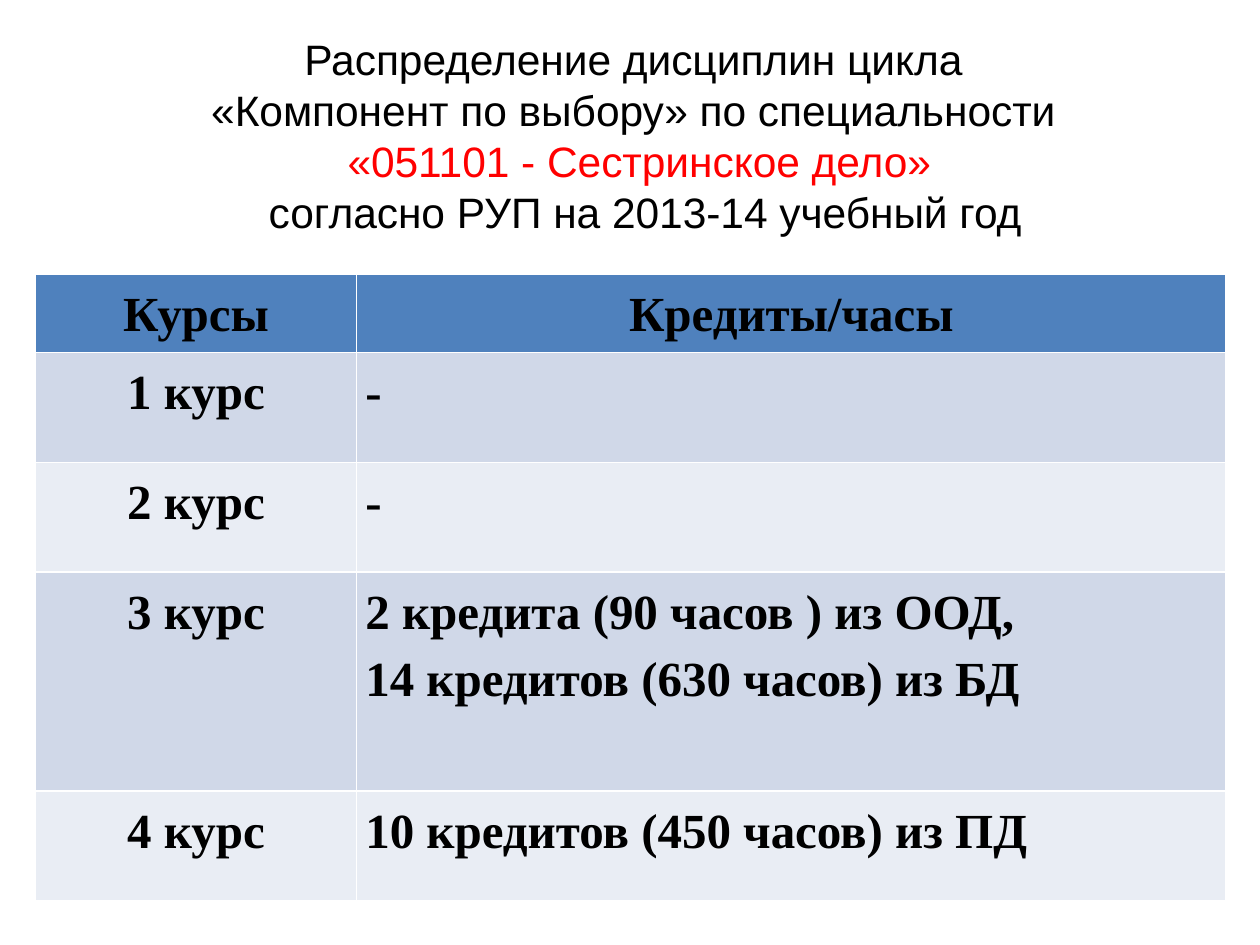
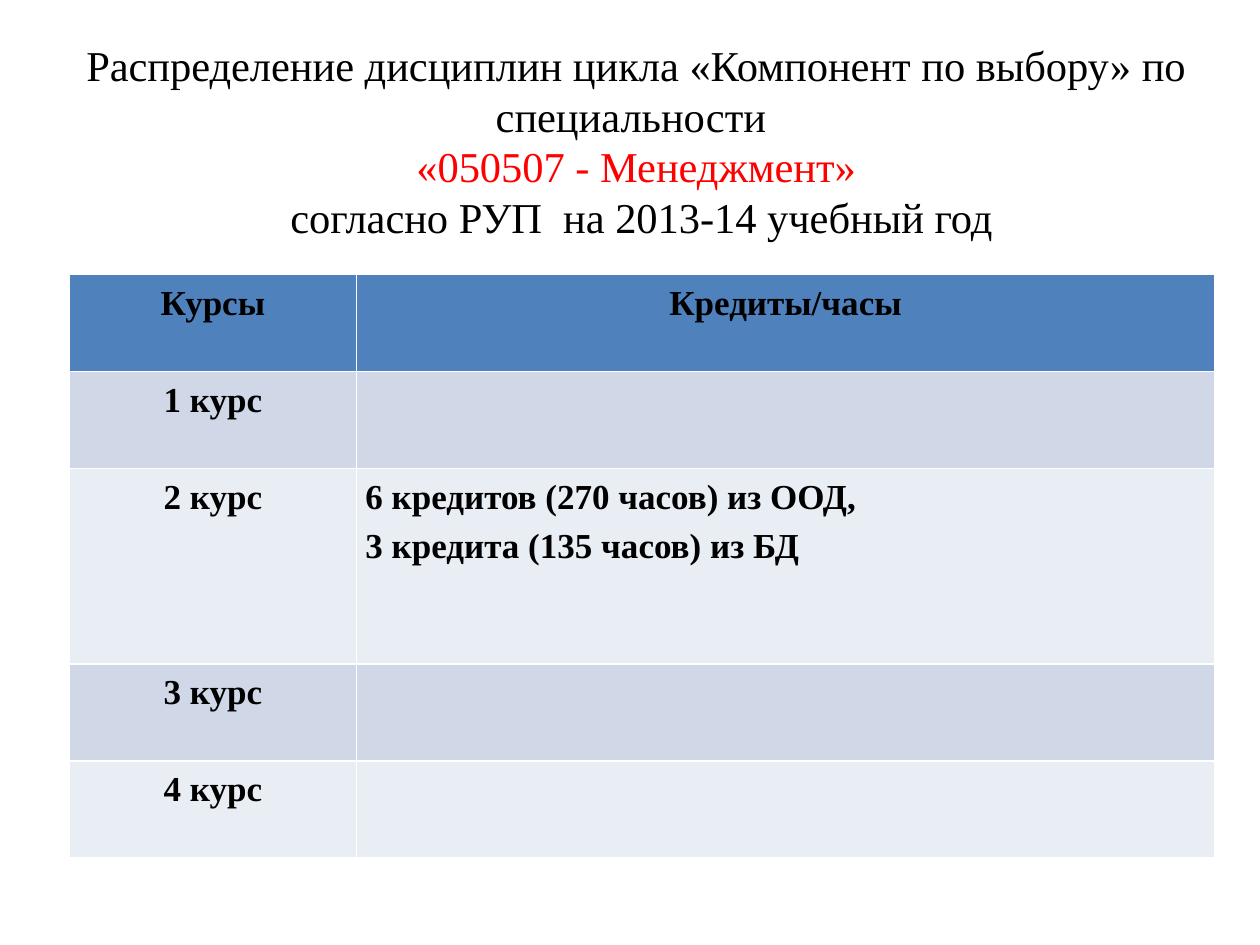
import pptx
import pptx.util
import pptx.dml.color
import pptx.enum.text

Inches = pptx.util.Inches
Pt = pptx.util.Pt
ALIGN = pptx.enum.text.PP_ALIGN
SERIF = "Times New Roman"
HUES = {
    "ink": "000000",
    "red": "FF0000",
    "head": "4F81BD",
    "odd": "D0D8E8",
    "even": "E9EDF4",
}
FRAME = {
    "margin_top": 0,
    "margin_bottom": 0,
    "word_wrap": True,
    "auto_size": pptx.enum.text.MSO_AUTO_SIZE.NONE,
    "vertical_anchor": pptx.enum.text.MSO_ANCHOR.MIDDLE,
}
PAD = {
    "margin_left": Inches(0.07),
    "margin_right": Inches(0.07),
    "margin_top": 0,
    "margin_bottom": 0,
}
HEADS = ("Курсы", "Кредиты/часы")


def style(item, values):
    for name, value in values.items():
        setattr(item, name, value)


def hue(name):
    return pptx.dml.color.RGBColor.from_string(HUES[name])


def ink(font, face, size, color="ink", bold=False):
    style(font, {"name": face, "size": Pt(size), "bold": bold})
    font.color.rgb = hue(color)


def place(shape, box):
    names = ("left", "top", "width", "height")
    style(shape, {name: Inches(part) for name, part in zip(names, box)})


def add_title(slide, box, face, lines):
    title = slide.shapes.title
    place(title, box)
    style(title.text_frame, FRAME)
    para = title.text_frame.paragraphs[0]
    style(para, {"alignment": ALIGN.CENTER, "line_spacing": Pt(29.15)})
    for index, (text, color) in enumerate(lines):
        if index:
            para.add_line_break()
        run = para.add_run()
        run.text = text
        ink(run.font, face, 24.3, color)


def fill_cell(cell, text, size, color, align):
    style(cell, PAD)
    cell.fill.solid()
    cell.fill.fore_color.rgb = hue(color)
    cell.text = text
    for para in cell.text_frame.paragraphs:
        style(para, {"alignment": align, "line_spacing": 1.25})
        ink(para.font, SERIF, size, bold=True)
        for run in para.runs:
            ink(run.font, SERIF, size, bold=True)


def add_grid(slide, left, widths, heights, size, loads):
    years = [(f"{year} курс", load) for year, load in enumerate(loads, 1)]
    rows = [HEADS] + years
    box = (left, 2.18, sum(widths), sum(heights))
    frame = slide.shapes.add_table(len(rows), len(widths), *map(Inches, box))
    grid = frame.table
    for col, width in zip(grid.columns, widths):
        col.width = Inches(width)
    for row, height in zip(grid.rows, heights):
        row.height = Inches(height)
    for r, row in enumerate(rows):
        color = ("odd" if r % 2 else "even") if r else "head"
        for c, text in enumerate(row):
            align = ALIGN.JUSTIFY if r and c else ALIGN.CENTER
            fill_cell(grid.cell(r, c), text, size, color, align)


def add_plan(deck, title, grid):
    slide = deck.slides.add_slide(deck.slide_layouts[5])
    add_grid(slide, **grid)
    add_title(slide, **title)


def main():
    deck = pptx.Presentation()
    style(deck, {"slide_width": Inches(10), "slide_height": Inches(7.5)})
    add_plan(
        deck,
        {
            "box": (0.5, 0.26, 9.15, 1.63),
            "face": "Arial",
            "lines": [
                ("Распределение дисциплин цикла ", "ink"),
                ("«Компонент по выбору» по специальности ", "ink"),
                ("«051101 - Сестринское дело»", "red"),
                (" согласно РУП на 2013-14 учебный год", "ink"),
            ],
        },
        {
            "left": 0.28,
            "widths": (2.55, 6.9),
            "heights": (0.62, 0.87, 0.87, 1.74, 0.87),
            "size": 28,
            "loads": (
                "-",
                "-",
                "2 кредита (90 часов ) из ООД,\n14 кредитов (630 часов) из БД",
                "10 кредитов (450 часов) из ПД",
            ),
        },
    )
    add_plan(
        deck,
        {
            "box": (0.55, 0.3, 9, 1.63),
            "face": SERIF,
            "lines": [
                ("Распределение дисциплин цикла «Компонент по выбору» по специальности ", "ink"),
                ("«050507 - Менеджмент»", "red"),
                (" согласно РУП  на 2013-14 учебный год", "ink"),
            ],
        },
        {
            "left": 0.55,
            "widths": (2.28, 6.81),
            "heights": (0.77, 0.77, 1.55, 0.77, 0.77),
            "size": 20,
            "loads": (
                "",
                "6 кредитов (270 часов) из ООД,\n3 кредита (135 часов) из БД",
                "",
                "",
            ),
        },
    )
    deck.save("out.pptx")


if __name__ == "__main__":
    main()
